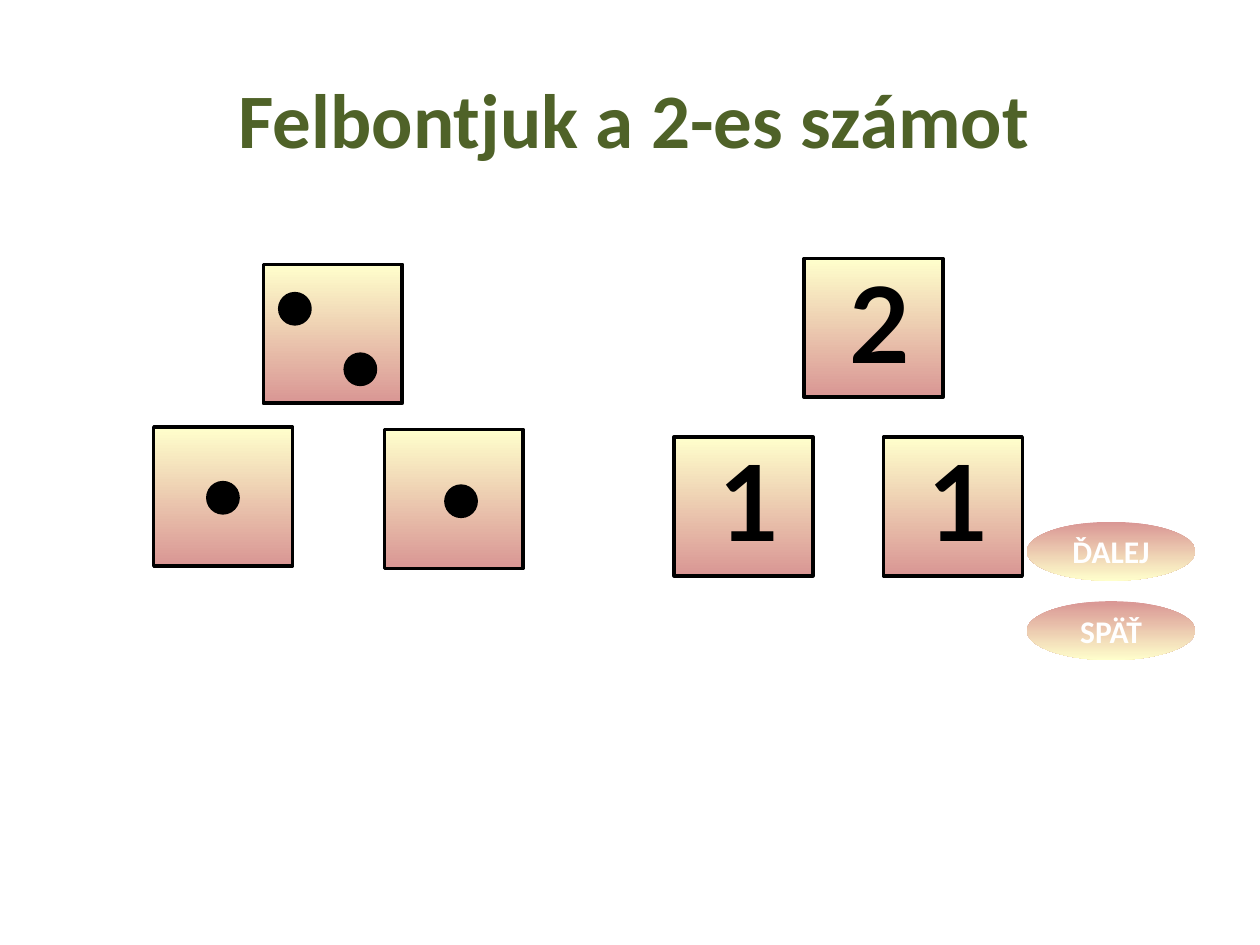
from pptx import Presentation
from pptx.dml.color import RGBColor
from pptx.enum.shapes import MSO_SHAPE
from pptx.enum.text import MSO_ANCHOR, PP_ALIGN
from pptx.util import Cm, Pt

RECT, OVAL = MSO_SHAPE.RECTANGLE, MSO_SHAPE.OVAL
MID, CENTER = MSO_ANCHOR.MIDDLE, PP_ALIGN.CENTER
HUES = {"black": "000000", "white": "FFFFFF", "green": "4F6228",
        "cream": "FFFFCC", "rose": "D99694"}


def draw(kind, x, y, w, h, fills, line=True):
    shape = slide.shapes.add_shape(kind, Cm(x), Cm(y), Cm(w), Cm(h))
    shape.shadow.inherit = False
    if len(fills) == 1:
        shape.fill.solid()
        shape.fill.fore_color.rgb = RGBColor.from_string(HUES[fills[0]])
    else:
        shape.fill.gradient()
        shape.fill.gradient_angle = 270
        for stop, hue in zip(shape.fill.gradient_stops, fills):
            stop.color.rgb = RGBColor.from_string(HUES[hue])
    if line:
        shape.line.color.rgb = RGBColor.from_string(HUES["black"])
        shape.line.width = Pt(2)
    else:
        shape.line.fill.background()
    return shape


def write(shape, text, size, face, hue):
    shape.text_frame.text = text
    para = shape.text_frame.paragraphs[0]
    para.alignment = CENTER
    font = para.runs[0].font
    font.size, font.name, font.bold = Pt(size), face, True
    font.color.rgb = RGBColor.from_string(HUES[hue])
    return para


deck = Presentation()
deck.slide_width, deck.slide_height = Cm(25.4), Cm(19.05)
slide = deck.slides.add_slide(deck.slide_layouts[6])

for text, y in [("SPÄŤ", 12.12), ("ĎALEJ", 10.52)]:
    oval = draw(OVAL, 20.7, y, 3.4, 1.19, ["rose", "cream"], False)
    oval.text_frame.vertical_anchor = MID
    write(oval, text, 18, "Calibri", "white")

title = slide.shapes.add_textbox(Cm(1.27), Cm(1.32), Cm(23.04), Cm(2.62))
title.text_frame.word_wrap = True
write(title, "Felbontjuk a 2-es számot", 44, "Calibri", "green")

side, dot = 2.8, 0.61
tiles = [
    (5.31, 5.33, [(5.64, 5.92), (6.96, 7.14)]),
    (3.1, 8.61, [(4.19, 9.73)]),
    (7.75, 8.66, [(8.99, 9.8)]),
]
for x, y, dots in tiles:
    draw(RECT, x, y, side, side, ["cream", "rose"])
    for left, top in dots:
        draw(OVAL, left, top, dot, dot, ["black"])

for text, x, y in [("2", 16.21, 5.21), ("1", 13.59, 8.81), ("1", 17.81, 8.81)]:
    card = draw(RECT, x, y, side, side, ["cream", "rose"])
    frame = card.text_frame
    frame.word_wrap = False
    frame.vertical_anchor = MID
    frame.margin_left = Cm(0.5)
    para = write(card, text, 60, "Lato", "black")
    para.line_spacing = 0.93

deck.save("out.pptx")
